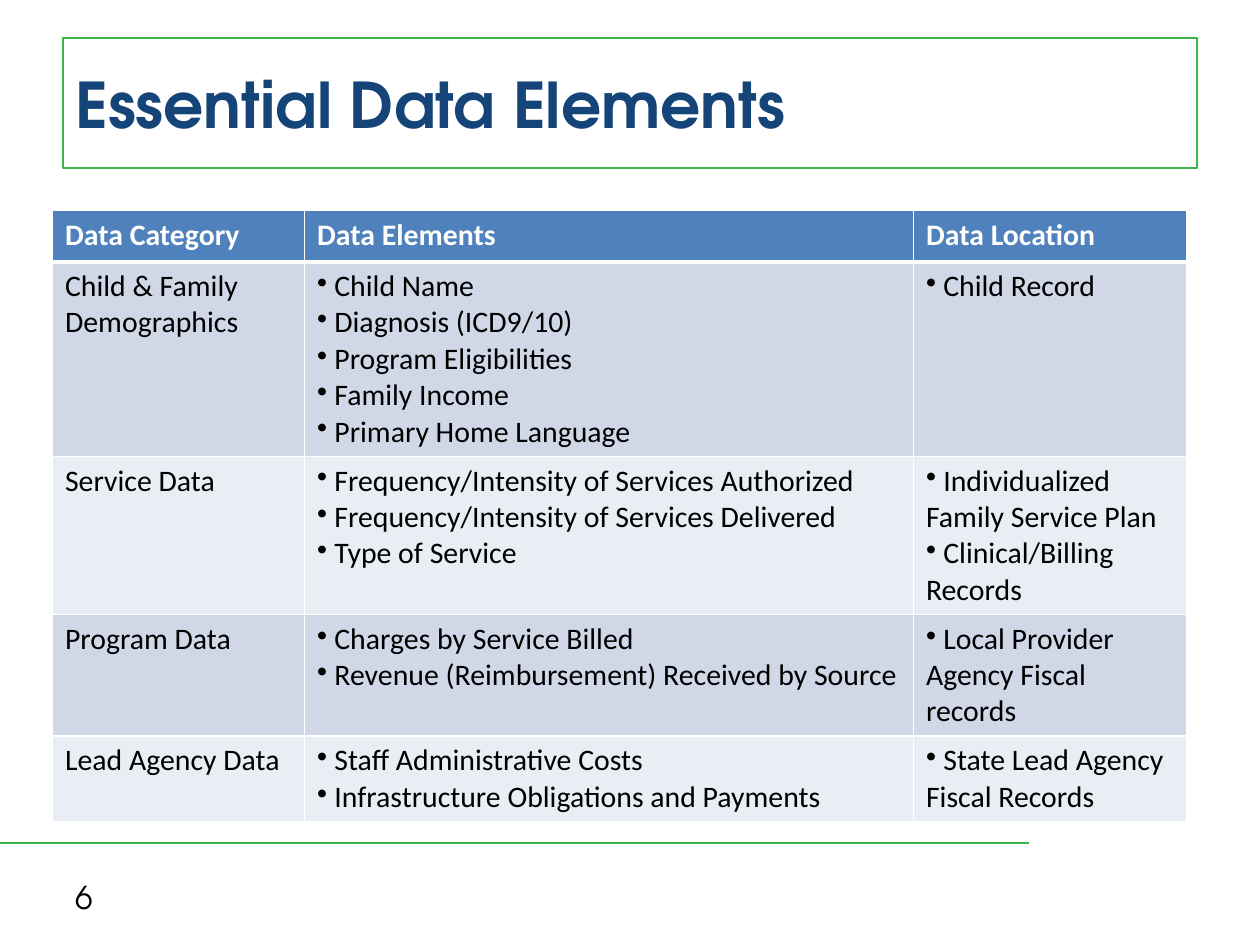
from lxml import etree
from pptx import Presentation
from pptx.dml.color import RGBColor
from pptx.enum import shapes, text
from pptx.oxml import ns
from pptx.util import Pt

GREEN = RGBColor(0x39, 0xB5, 0x4A)
NAVY = RGBColor(0x15, 0x45, 0x78)
BLUE = RGBColor(0x4F, 0x81, 0xBD)
DARK_BAND = RGBColor(0xD0, 0xD8, 0xE8)
LIGHT_BAND = RGBColor(0xE9, 0xED, 0xF4)
WHITE = RGBColor(0xFF, 0xFF, 0xFF)
BLACK = RGBColor(0, 0, 0)

HEADERS = ["Data Category", "Data Elements", "Data Location"]
# Category, elements, locations, row height
ROWS = [
    ("Child & Family Demographics",
     ["Child Name", "Diagnosis (ICD9/10)", "Program Eligibilities",
      "Family Income", "Primary Home Language"],
     ["Child Record"], 111),
    ("Service Data",
     ["Frequency/Intensity of Services Authorized",
      "Frequency/Intensity of Services Delivered", "Type of Service"],
     ["Individualized Family Service Plan", "Clinical/Billing Records"], 90),
    ("Program Data",
     ["Charges by Service Billed", "Revenue (Reimbursement) Received by Source"],
     ["Local Provider Agency Fiscal records"], 69.5),
    ("Lead Agency Data",
     ["Staff Administrative Costs", "Infrastructure Obligations and Payments"],
     ["State Lead Agency Fiscal Records"], 48.5),
]


def write(frame, lines, font, size, color, bold=False, bullets=False):
    for index, line in enumerate(lines):
        para = frame.add_paragraph() if index else frame.paragraphs[0]
        para.text = f" {line}" if bullets else line
        para.alignment = text.PP_ALIGN.LEFT
        if bullets:
            properties = para._p.get_or_add_pPr()
            etree.SubElement(properties, ns.qn("a:buChar"), char="•")
        para.font.name = font
        para.font.size = Pt(size)
        para.font.bold = bold
        para.font.color.rgb = color


def fill_cell(cell, color, bottom_width):
    properties = cell._tc.get_or_add_tcPr()
    for side, width in (("L", 1), ("R", 1), ("T", 1), ("B", bottom_width)):
        border = etree.SubElement(properties, ns.qn(f"a:ln{side}"), w=str(Pt(width)))
        solid = etree.SubElement(border, ns.qn("a:solidFill"))
        etree.SubElement(solid, ns.qn("a:srgbClr"), val=str(WHITE))
    cell.fill.solid()
    cell.fill.fore_color.rgb = color


deck = Presentation()
deck.slide_width, deck.slide_height = Pt(720), Pt(540)
page = deck.slides.add_slide(deck.slide_layouts[6])

# Footer rule
rule = page.shapes.add_connector(
    shapes.MSO_CONNECTOR.STRAIGHT, Pt(0), Pt(481.7), Pt(588), Pt(481.7))
rule.line.color.rgb = GREEN
rule.line.width = Pt(1.5)
etree.SubElement(rule._element.spPr, ns.qn("a:effectLst"))

# Data table
heights = [29.5] + [row[3] for row in ROWS]
table = page.shapes.add_table(
    len(heights), len(HEADERS), Pt(30), Pt(120.2), Pt(648), Pt(sum(heights))).table
for column, width in zip(table.columns, (144, 348, 156)):
    column.width = Pt(width)
for row, height in zip(table.rows, heights):
    row.height = Pt(height)

for column, header in enumerate(HEADERS):
    cell = table.cell(0, column)
    fill_cell(cell, BLUE, 3)
    write(cell.text_frame, [header], "Calibri", 17, WHITE, bold=True)

for number, (category, elements, locations, _) in enumerate(ROWS, start=1):
    band = DARK_BAND if number % 2 else LIGHT_BAND
    for column, lines in enumerate(([category], elements, locations)):
        cell = table.cell(number, column)
        fill_cell(cell, band, 1)
        if number == 1:
            cell._tc.tcPr.find(ns.qn("a:lnT")).set("w", str(Pt(3)))
        write(cell.text_frame, lines, "Calibri", 17, BLACK, bullets=column > 0)

# Framed title
title = page.shapes.add_shape(
    shapes.MSO_SHAPE.RECTANGLE, Pt(36), Pt(21.6), Pt(648), Pt(74.4))
title.shadow.inherit = False
title.fill.background()
title.line.color.rgb = GREEN
title.line.width = Pt(1)
title.text_frame.word_wrap = True
title.text_frame.vertical_anchor = text.MSO_ANCHOR.MIDDLE
write(title.text_frame, ["Essential Data Elements"], "TeX Gyre Adventor", 36, NAVY, bold=True)

# Page number
number_box = page.shapes.add_textbox(Pt(36), Pt(498.2), Pt(168), Pt(28.8))
number_box.text_frame.word_wrap = True
number_box.text_frame.vertical_anchor = text.MSO_ANCHOR.MIDDLE
write(number_box.text_frame, ["6"], "TeX Gyre Adventor", 18, BLACK)

deck.save("out.pptx")
